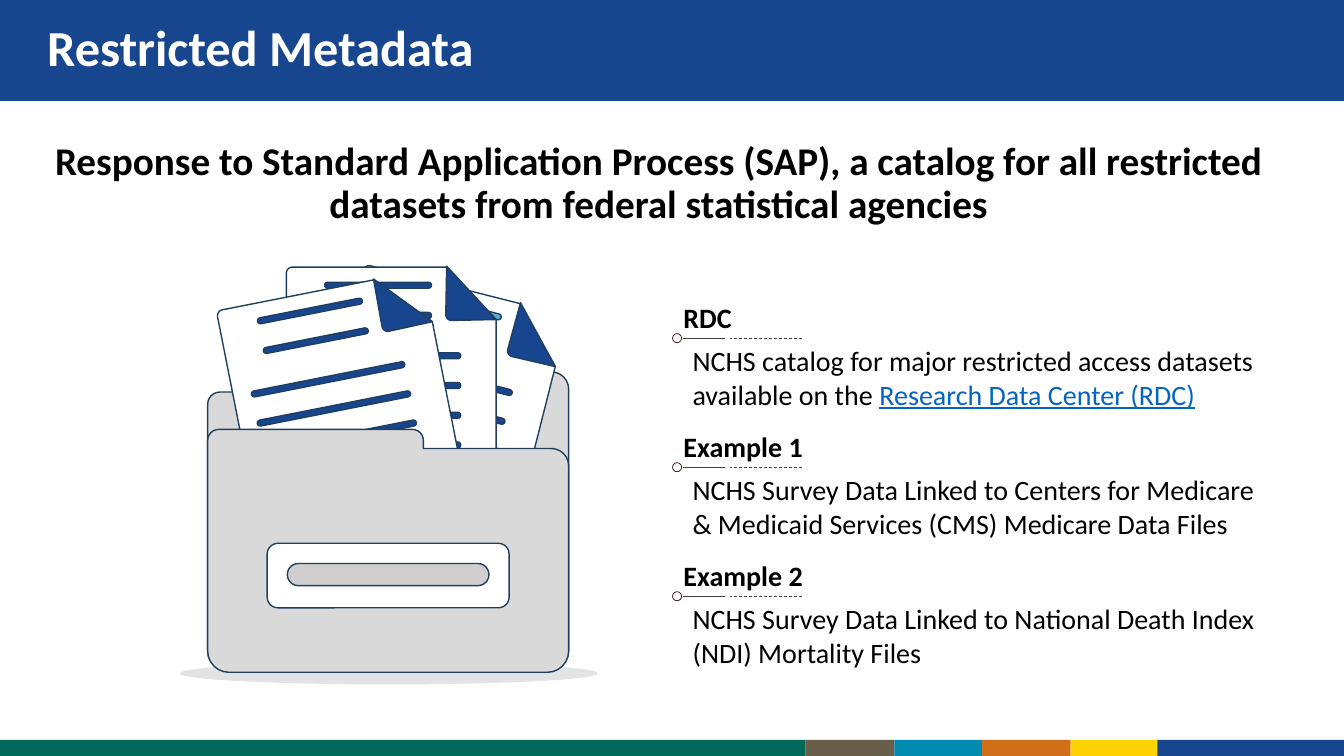
import math

from pptx import Presentation
from pptx.dml.color import RGBColor
from pptx.enum import dml, shapes, text
from pptx.oxml.ns import qn
from pptx.util import Inches, Pt
from lxml import etree

BLUE, NAVY, SKY, GREY = "17468F", "203F5E", "56ACE0", "D9D9D9"
RECT, OVAL, PILL = (shapes.MSO_SHAPE.RECTANGLE, shapes.MSO_SHAPE.OVAL,
                    shapes.MSO_SHAPE.ROUNDED_RECTANGLE)


def rgb(color):
    return RGBColor.from_string(color)


def paint(shape, fill=None, line=None, width=1):
    shape.shadow.inherit = False
    if fill:
        shape.fill.solid()
        shape.fill.fore_color.rgb = rgb(fill)
    else:
        shape.fill.background()
    if line:
        shape.line.color.rgb = rgb(line)
        shape.line.width = Pt(width)
    else:
        shape.line.fill.background()
    return shape


def add_box(slide, kind, x, y, w, h, fill=None, line=None, width=1):
    shape = slide.shapes.add_shape(kind, Inches(x), Inches(y), Inches(w), Inches(h))
    return paint(shape, fill, line, width)


def add_text(slide, x, y, w, h, runs, size, color="000000", bold=False,
             anchor=text.MSO_ANCHOR.TOP):
    """Runs are (words, is_link) pairs; returns the paragraph."""
    frame = slide.shapes.add_textbox(Inches(x), Inches(y), Inches(w), Inches(h)).text_frame
    frame.word_wrap = True
    frame.vertical_anchor = anchor
    paragraph = frame.paragraphs[0]
    font = paragraph.font
    font.name, font.size, font.bold = "Calibri", Pt(size), bold
    font.color.rgb = rgb(color)
    for words, is_link in runs:
        run = paragraph.add_run()
        run.text = words
        if is_link:
            run.font.underline = True
            run.font.color.rgb = rgb("0563C1")
    return paragraph


def add_rule(slide, x1, x2, y, dashed=False):
    rule = slide.shapes.add_connector(shapes.MSO_CONNECTOR.STRAIGHT, Inches(x1), Inches(y),
                                      Inches(x2), Inches(y))
    rule.line.color.rgb = rgb("404040")
    rule.line.width = Pt(0.5)
    if dashed:
        rule.line.dash_style = dml.MSO_LINE.DASH
    etree.SubElement(rule._element.spPr, qn("a:effectLst"))


def round_corners(corners, steps=6):
    """Turn (x, y, radius) corners into outline points."""
    points = []
    for i, (x, y, radius) in enumerate(corners):
        if not radius:
            points.append((x, y))
            continue
        ends = []
        for nx, ny, _ in (corners[i - 1], corners[(i + 1) % len(corners)]):
            share = radius / math.hypot(nx - x, ny - y)
            ends.append((x + (nx - x) * share, y + (ny - y) * share))
        (ax, ay), (bx, by) = ends
        for step in range(steps + 1):
            turn = step / steps * math.pi / 2
            a, b = 1 - math.sin(turn), 1 - math.cos(turn)
            points.append((x + (ax - x) * a + (bx - x) * b,
                           y + (ay - y) * a + (by - y) * b))
    return points


def add_outline(slide, points, fill):
    (x, y), *rest = points
    builder = slide.shapes.build_freeform(Inches(x), Inches(y), scale=1.0)
    builder.add_line_segments([(Inches(px), Inches(py)) for px, py in rest])
    paint(builder.convert_to_shape(), fill, NAVY)


def add_page(slide, x, y, angle, sky_lines):
    """Page with a folded corner and seven text lines, turned about its centre."""
    w, h, fold = 2.08, 2.5, 0.5
    turn = math.radians(angle)

    def place(px, py):
        dx, dy = px - w / 2, py - h / 2
        return (x + w / 2 + dx * math.cos(turn) - dy * math.sin(turn),
                y + h / 2 + dx * math.sin(turn) + dy * math.cos(turn))

    sheet = [(0, 0, 0.06), (w - fold + 0.01, 0, 0), (w, fold + 0.02, 0),
             (w, h, 0.06), (0, h, 0.06)]
    flap = [(w - fold + 0.01, -0.01, 0), (w, fold + 0.02, 0), (w - fold, fold + 0.03, 0.06)]
    for corners, fill in ((sheet, "FFFFFF"), (flap, BLUE)):
        add_outline(slide, [place(*point) for point in round_corners(corners)], fill)

    lines = [(0.38, 0.18 + 0.3 * i, 1.06) for i in range(2)]
    lines += [(0.18, 0.88 + 0.295 * i, 1.55) for i in range(5)]
    for i, (left, middle, length) in enumerate(lines):
        cx, cy = place(left + length / 2, middle)
        bar = add_box(slide, PILL, cx - length / 2, cy - 0.03, length, 0.06,
                      SKY if i in sky_lines else BLUE, NAVY)
        bar.adjustments[0] = 0.5
        bar.rotation = angle


def add_folder(slide, x, y, w, h):
    right, bottom = x + w, y + h
    shade = add_box(slide, OVAL, x - 0.28, bottom - 0.1, w + 0.57, 0.22, "000000")
    color = shade._element.spPr.find(qn("a:solidFill"))[0]
    etree.SubElement(color, qn("a:alpha"), val="11000")

    back = [(x, y + 0.2, 0.12), (x + 1.78, y + 0.2, 0), (x + 1.78, y, 0.17),
            (right, y, 0.17), (right, bottom - 0.02, 0.19), (x, bottom - 0.02, 0.19)]
    add_outline(slide, round_corners(back), GREY)
    add_page(slide, x + 1.22, y - 0.85, 14.2, {0, 1, 4, 5, 6})
    add_page(slide, x + 0.78, y - 1.04, 0, {6})
    add_page(slide, x + 0.31, y - 0.83, -11.2, {5, 6})
    front = [(x, y + 0.57, 0.11), (x + 2.14, y + 0.57, 0.11), (x + 2.14, y + 0.76, 0),
             (right, y + 0.76, 0.17), (right, bottom, 0.21), (x, bottom, 0.21)]
    add_outline(slide, round_corners(front), GREY)
    add_box(slide, PILL, x + 0.59, y + 1.7, 2.4, 0.64, "FFFFFF", NAVY)
    label = add_box(slide, PILL, x + 0.79, y + 1.9, 2, 0.22, "D0CECE", NAVY)
    label.adjustments[0] = 0.5


def add_entry(slide, x, y, w, heading, runs):
    """Heading above a ringed rule at y, description below it."""
    add_rule(slide, x + 1.28, x + 0.57, y, dashed=True)
    add_rule(slide, x + 0.52, x + 0.1, y)
    add_box(slide, OVAL, x, y - 0.05, 0.09, 0.09, line="440001", width=0.5)
    add_text(slide, x + 0.1, y, w, 0.77, runs, 20)
    add_text(slide, x + 0.01, y - 0.43, 2.17, 0.44, [(heading, False)], 20, bold=True,
             anchor=text.MSO_ANCHOR.MIDDLE)


def add_header(slide, w, h):
    add_box(slide, RECT, 0, 0, w, h, BLUE, BLUE)
    title = add_text(slide, 0.37, 0.09, w - 0.55, 0.82, [("Restricted Metadata", False)], 36,
                     "FFFFFF", True, text.MSO_ANCHOR.MIDDLE)
    title.line_spacing = 0.9
    summary = add_text(slide, 0.37, h + 0.36, 12.32, 1.09, [(
        "Response to Standard Application Process (SAP), a catalog for all restricted "
        "datasets from federal statistical agencies", False)], 28, bold=True)
    summary.alignment = text.PP_ALIGN.CENTER
    summary.line_spacing = 0.9
    summary.space_before = Pt(10)


def add_footer(slide, y, w, h):
    bands = [(0, "006859"), (7.99, "695E4A"), (8.87, "018BB0"), (9.74, "CF6F19"),
             (10.62, "FFD302"), (11.48, BLUE)]
    ends = [left for left, _ in bands[1:]] + [w]
    for (left, color), end in zip(bands, ends):
        add_box(slide, RECT, left, y, end - left, h, color)


def main():
    deck = Presentation()
    deck.slide_width, deck.slide_height = Inches(13.33), Inches(7.5)
    slide = deck.slides.add_slide(deck.slide_layouts[6])
    add_footer(slide, 7.34, 13.33, 0.16)
    add_header(slide, 13.33, 1)
    add_folder(slide, 2.06, 3.69, 3.58, 2.98)
    entries = [
        (5.78, "RDC", [("NCHS catalog for major restricted access datasets available on the ",
                        False), ("Research Data Center (RDC)", True)]),
        (5.92, "Example 1", [("NCHS Survey Data Linked to Centers for Medicare & Medicaid "
                              "Services (CMS) Medicare Data Files", False)]),
        (6.08, "Example 2", [("NCHS Survey Data Linked to National Death Index (NDI) "
                              "Mortality Files", False)]),
    ]
    for i, (width, heading, runs) in enumerate(entries):
        add_entry(slide, 6.67, 3.36 + 1.28 * i, width, heading, runs)
    deck.save("out.pptx")


if __name__ == "__main__":
    main()
